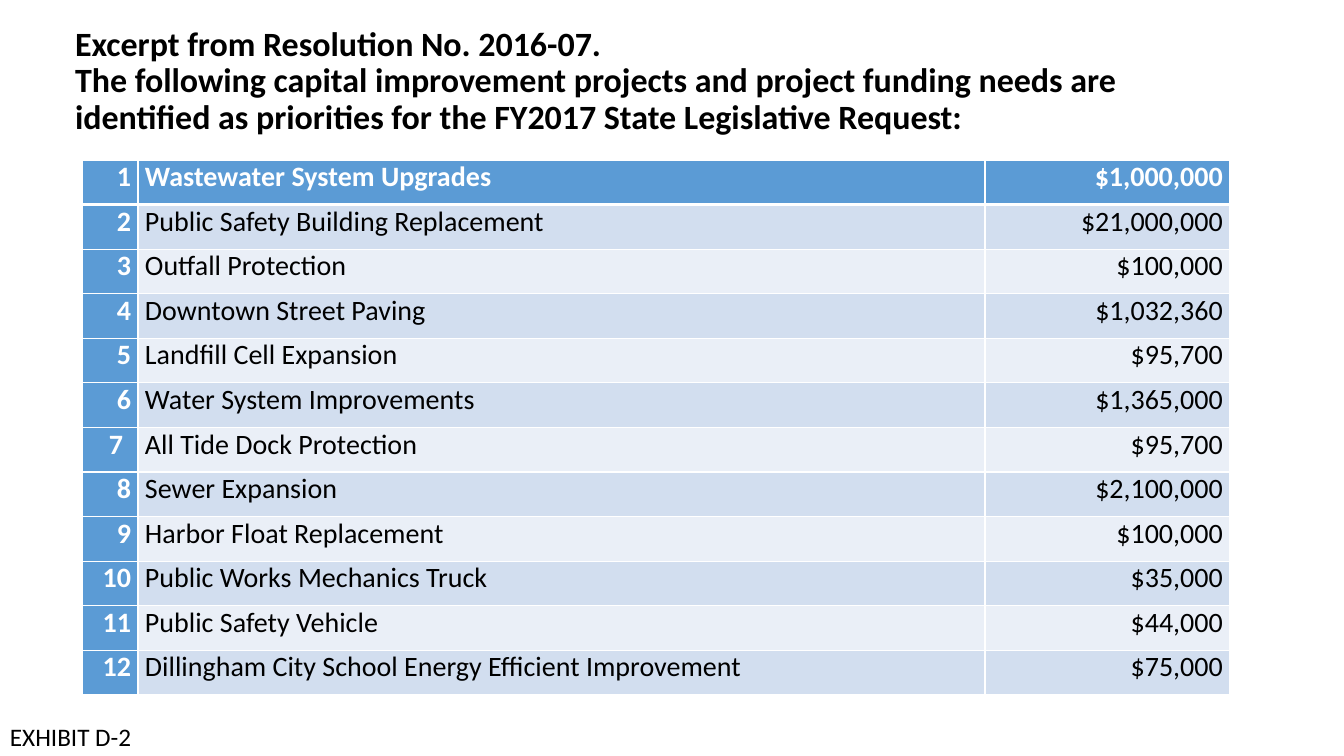
import pptx
import pptx.util
import pptx.dml.color
import pptx.enum.text
import pptx.oxml

PX = 914400 / 100.8
COLORS = {"ink": "000000", "paper": "FFFFFF", "accent": "5B9BD5",
          "band_dark": "D2DEEF", "band_light": "EAEFF7"}
ALIGN = pptx.enum.text.PP_ALIGN
NS = "http://schemas.openxmlformats.org/drawingml/2006/main"


def emu(px):
    return pptx.util.Emu(round(px * PX))


def add_run(paragraph, text, size, color, bold=False):
    run = paragraph.add_run()
    run.text = text
    run.font.name = "Calibri"
    run.font.size = pptx.util.Pt(size)
    run.font.bold = bold
    run.font.color.rgb = pptx.dml.color.RGBColor.from_string(COLORS[color])


projects = [
    ("Wastewater System Upgrades", "$1,000,000"),
    ("Public Safety Building Replacement", "$21,000,000"),
    ("Outfall Protection", "$100,000"),
    ("Downtown Street Paving", "$1,032,360"),
    ("Landfill Cell Expansion", "$95,700"),
    ("Water System Improvements", "$1,365,000"),
    ("All Tide Dock Protection", "$95,700"),
    ("Sewer Expansion", "$2,100,000"),
    ("Harbor Float Replacement", "$100,000"),
    ("Public Works Mechanics Truck", "$35,000"),
    ("Public Safety Vehicle", "$44,000"),
    ("Dillingham City School Energy Efficient Improvement", "$75,000"),
]

prs = pptx.Presentation()
prs.slide_width, prs.slide_height = emu(1344), emu(756)
slide = prs.slides.add_slide(prs.slide_layouts[5])

resolution = slide.shapes.title
resolution.left, resolution.top = emu(65), emu(22)
resolution.width, resolution.height = emu(1187), emu(120)
resolution_frame = resolution.text_frame
resolution_frame.word_wrap = True
resolution_frame.auto_size = pptx.enum.text.MSO_AUTO_SIZE.NONE
resolution_frame.vertical_anchor = pptx.enum.text.MSO_ANCHOR.MIDDLE
heading = resolution_frame.paragraphs[0]
heading.alignment = ALIGN.LEFT
heading.line_spacing = 0.9
add_run(heading, "Excerpt from Resolution No. 2016-07.", 24.3, "ink", True)
heading.add_line_break()
add_run(heading, "The following capital improvement projects and project funding needs are "
        "identified as priorities for the FY2017 State Legislative Request:", 24.3, "ink", True)

table_height = 535
column_widths = (56, 847, 245)
priorities = slide.shapes.add_table(
    len(projects), 3, emu(82), emu(160), emu(sum(column_widths)), emu(table_height)).table
for column, width in zip(priorities.columns, column_widths):
    column.width = emu(width)

for index, (project, amount) in enumerate(projects):
    priorities.rows[index].height = emu(table_height / len(projects))
    for position, text in enumerate((str(index + 1), project, amount)):
        cell = priorities.cell(index, position)
        cell.margin_left = cell.margin_right = emu(7)
        cell.margin_top = cell.margin_bottom = 0
        strong = index == 0 or position == 0
        band = "band_dark" if index % 2 else "band_light"
        cell.fill.solid()
        cell.fill.fore_color.rgb = pptx.dml.color.RGBColor.from_string(
            COLORS["accent" if strong else band])
        entry = cell.text_frame.paragraphs[0]
        entry.alignment = ALIGN.LEFT if position == 1 else ALIGN.RIGHT
        add_run(entry, text, 20, "paper" if strong else "ink", strong)

        properties = cell._tc.get_or_add_tcPr()
        for order, side in enumerate(("lnL", "lnR", "lnT", "lnB")):
            thick = (index, side) in ((0, "lnB"), (1, "lnT"))
            border = pptx.oxml.parse_xml(
                f'<a:{side} xmlns:a="{NS}" w="{pptx.util.Pt(3 if thick else 1)}">'
                f'<a:solidFill><a:srgbClr val="{COLORS["paper"]}"/></a:solidFill></a:{side}>')
            properties.insert(order, border)

dock_number = priorities.cell(6, 0)
dock_number.margin_left = emu(19)
dock_number.text_frame.paragraphs[0].alignment = ALIGN.CENTER

exhibit = slide.shapes.add_textbox(emu(0), emu(716), emu(143), emu(40))
exhibit.text_frame.word_wrap = False
exhibit.text_frame.auto_size = pptx.enum.text.MSO_AUTO_SIZE.SHAPE_TO_FIT_TEXT
add_run(exhibit.text_frame.paragraphs[0], "EXHIBIT D-2", 18, "ink")

prs.save("out.pptx")
